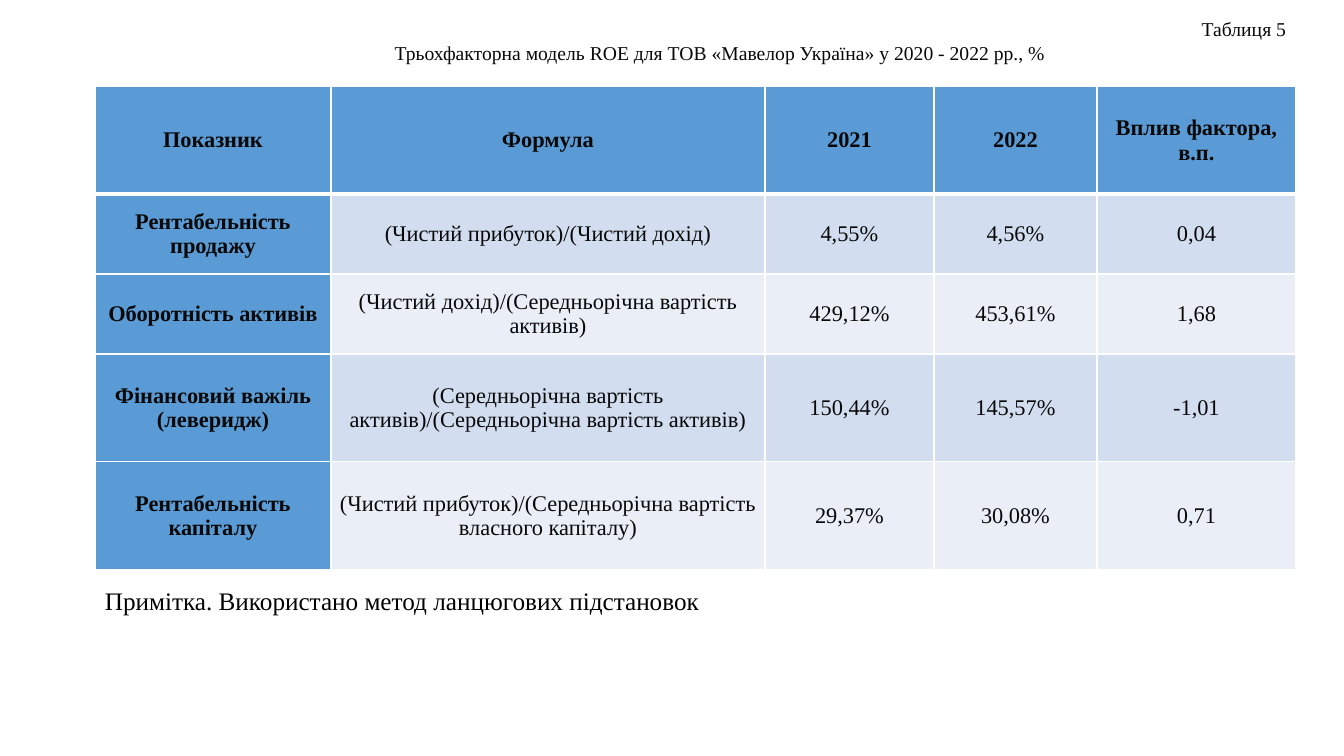
from lxml.etree import SubElement
from pptx import Presentation
from pptx.dml.color import RGBColor
from pptx.enum.text import MSO_ANCHOR as Anchor, MSO_AUTO_SIZE as AutoSize, PP_ALIGN as Align
from pptx.oxml.ns import qn
from pptx.util import Pt

TITLE = [
    ("Таблиця 5", Align.RIGHT),
    ("Трьохфакторна модель ROE для ТОВ «Мавелор Україна» у 2020 - 2022 рр., %", Align.CENTER),
]
ROWS = [
    ("Показник", "Формула", "2021", "2022", "Вплив фактора, в.п."),
    ("Рентабельність продажу", "(Чистий прибуток)/(Чистий дохід)", "4,55%", "4,56%", "0,04"),
    ("Оборотність активів", "(Чистий дохід)/(Середньорічна вартість активів)",
     "429,12%", "453,61%", "1,68"),
    ("Фінансовий важіль (леверидж)",
     "(Середньорічна вартість активів)/(Середньорічна вартість активів)",
     "150,44%", "145,57%", "-1,01"),
    ("Рентабельність капіталу", "(Чистий прибуток)/(Середньорічна вартість власного капіталу)",
     "29,37%", "30,08%", "0,71"),
]
NOTE = "Примітка. Використано метод ланцюгових підстановок"

COL_WIDTHS = [236, 434, 169, 163, 199]
ROW_HEIGHTS = [108, 80, 80, 108, 108]
LEFT, TABLE_TOP, WIDTH = 95, 86, sum(COL_WIDTHS)
HEADER, BANDS = "5B9BD5", ("EAEFF7", "D2DEEF")
INK, BLACK, WHITE = "080808", "000000", "FFFFFF"
FONT = "Times New Roman"


def px(n):
    return round(n * 914400 / 100.8)


def color(hex_code):
    return RGBColor.from_string(hex_code)


def add_run(p, text, size, ink, bold=False):
    r = p.add_run()
    r.text = text
    r.font.name, r.font.size, r.font.bold = FONT, Pt(size), bold
    r.font.color.rgb = color(ink)


def add_text_frame(slide, left, top, width, height):
    tf = slide.shapes.add_textbox(px(left), px(top), px(width), px(height)).text_frame
    tf.word_wrap = True
    tf.auto_size = AutoSize.SHAPE_TO_FIT_TEXT
    return tf


def set_borders(cell, row):
    """White rules of 1 pt, with 3 pt between the header and the body."""
    tc_pr = cell._tc.get_or_add_tcPr()
    widths = {"L": 1, "R": 1, "T": 3 if row == 1 else 1, "B": 3 if row == 0 else 1}
    for side, width in widths.items():
        ln = SubElement(tc_pr, qn(f"a:ln{side}"), w=str(Pt(width)))
        fill = SubElement(ln, qn("a:solidFill"))
        SubElement(fill, qn("a:srgbClr"), val=WHITE)


def add_title(slide):
    tf = add_text_frame(slide, LEFT, 12, WIDTH, 57)
    tf.vertical_anchor = Anchor.MIDDLE
    for i, (text, align) in enumerate(TITLE):
        p = tf.add_paragraph() if i else tf.paragraphs[0]
        p.alignment = align
        p._p.get_or_add_pPr().set("indent", str(px(49)))
        add_run(p, text, 14, INK)


def add_factor_table(slide):
    table = slide.shapes.add_table(len(ROWS), len(COL_WIDTHS), px(LEFT), px(TABLE_TOP),
                                   px(WIDTH), px(sum(ROW_HEIGHTS))).table
    table.first_col = True
    for column, width in zip(table.columns, COL_WIDTHS):
        column.width = px(width)
    for i, (row, height) in enumerate(zip(ROWS, ROW_HEIGHTS)):
        table.rows[i].height = px(height)
        for j, text in enumerate(row):
            cell = table.cell(i, j)
            heading = i == 0 or j == 0
            set_borders(cell, i)
            cell.fill.solid()
            cell.fill.fore_color.rgb = color(HEADER if heading else BANDS[i % 2])
            cell.vertical_anchor = Anchor.MIDDLE
            cell.margin_left = cell.margin_right = px(7)
            cell.margin_top = cell.margin_bottom = 0
            p = cell.text_frame.paragraphs[0]
            p.alignment = Align.CENTER
            add_run(p, text, 16, INK, heading)


def main():
    prs = Presentation()
    prs.slide_width, prs.slide_height = px(1344), px(756)
    slide = prs.slides.add_slide(prs.slide_layouts[6])
    add_factor_table(slide)
    add_title(slide)
    note = add_text_frame(slide, LEFT, 580, 672, 40)
    add_run(note.paragraphs[0], NOTE, 18, BLACK)
    prs.save("out.pptx")


if __name__ == "__main__":
    main()
